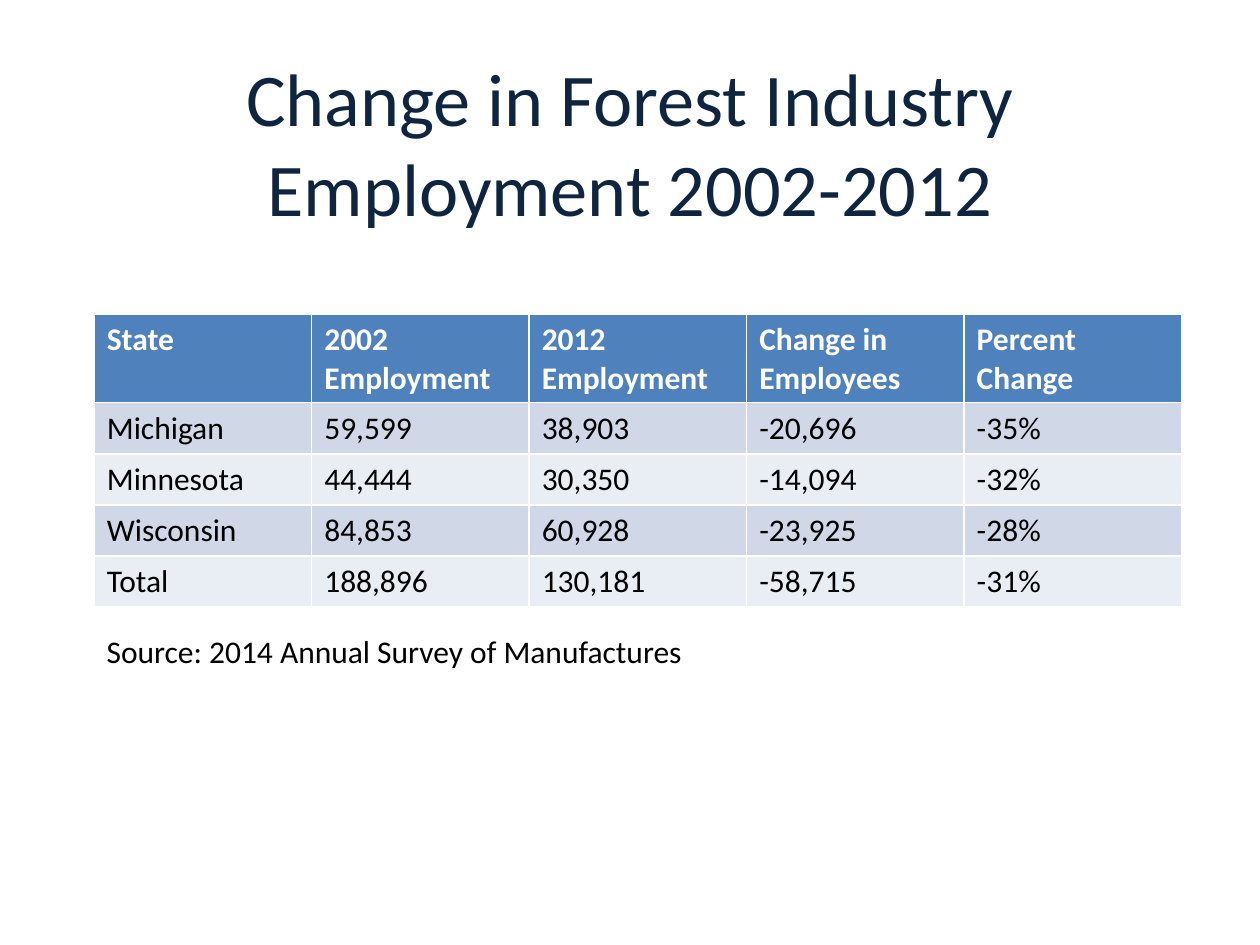
from pptx import Presentation
from pptx.dml.color import RGBColor
from pptx.enum import text
from pptx.util import Cm, Pt

NAVY = RGBColor(0x0F, 0x24, 0x3E)
BLACK = RGBColor(0, 0, 0)
WHITE = RGBColor(0xFF, 0xFF, 0xFF)
HEADER = RGBColor(0x4F, 0x81, 0xBD)
BANDS = RGBColor(0xE9, 0xED, 0xF4), RGBColor(0xD0, 0xD8, 0xE8)

ROWS = [
    ("State", "2002 Employment", "2012 Employment", "Change in Employees", "Percent Change"),
    ("Michigan", "59,599", "38,903", "-20,696", "-35%"),
    ("Minnesota", "44,444", "30,350", "-14,094", "-32%"),
    ("Wisconsin", "84,853", "60,928", "-23,925", "-28%"),
    ("Total", "188,896", "130,181", "-58,715", "-31%"),
]
LEFT = Cm(1.9)


def write(tf, words, size, color, bold=False):
    tf.text = words
    p = tf.paragraphs[0]
    p.font.name = "Calibri"
    p.font.size = Pt(size)
    p.font.bold = bold
    p.font.color.rgb = color
    return p


prs = Presentation()
prs.slide_width, prs.slide_height = Cm(25.4), Cm(19.05)
s = prs.slides.add_slide(prs.slide_layouts[6])

# Title, raised a little above the middle of its box
tf = s.shapes.add_textbox(LEFT, Cm(1.27), Cm(21.6), Cm(4.1)).text_frame
tf.word_wrap = True
tf.vertical_anchor = text.MSO_ANCHOR.MIDDLE
tf.margin_bottom = Cm(1.05)
p = write(tf, "Change in Forest Industry Employment 2002-2012", 42.5, NAVY)
p.alignment = text.PP_ALIGN.CENTER

# Employment table; the default table style gives the white rules
table = s.shapes.add_table(len(ROWS), len(ROWS[0]), LEFT, Cm(6.34), Cm(21.92), Cm(5.88)).table
for i, row in enumerate(ROWS):
    table.rows[i].height = Cm(1.03 if i else 1.76)
    for j, words in enumerate(row):
        cell = table.cell(i, j)
        cell.fill.solid()
        cell.fill.fore_color.rgb = BANDS[i % 2] if i else HEADER
        write(cell.text_frame, words, 18, BLACK if i else WHITE, bold=i == 0)

# Source line
tf = s.shapes.add_textbox(LEFT, Cm(12.62), Cm(12.24), Cm(1.02)).text_frame
tf.word_wrap = False
tf.auto_size = text.MSO_AUTO_SIZE.SHAPE_TO_FIT_TEXT
write(tf, "Source: 2014 Annual Survey of Manufactures", 18, BLACK)

prs.save("out.pptx")
